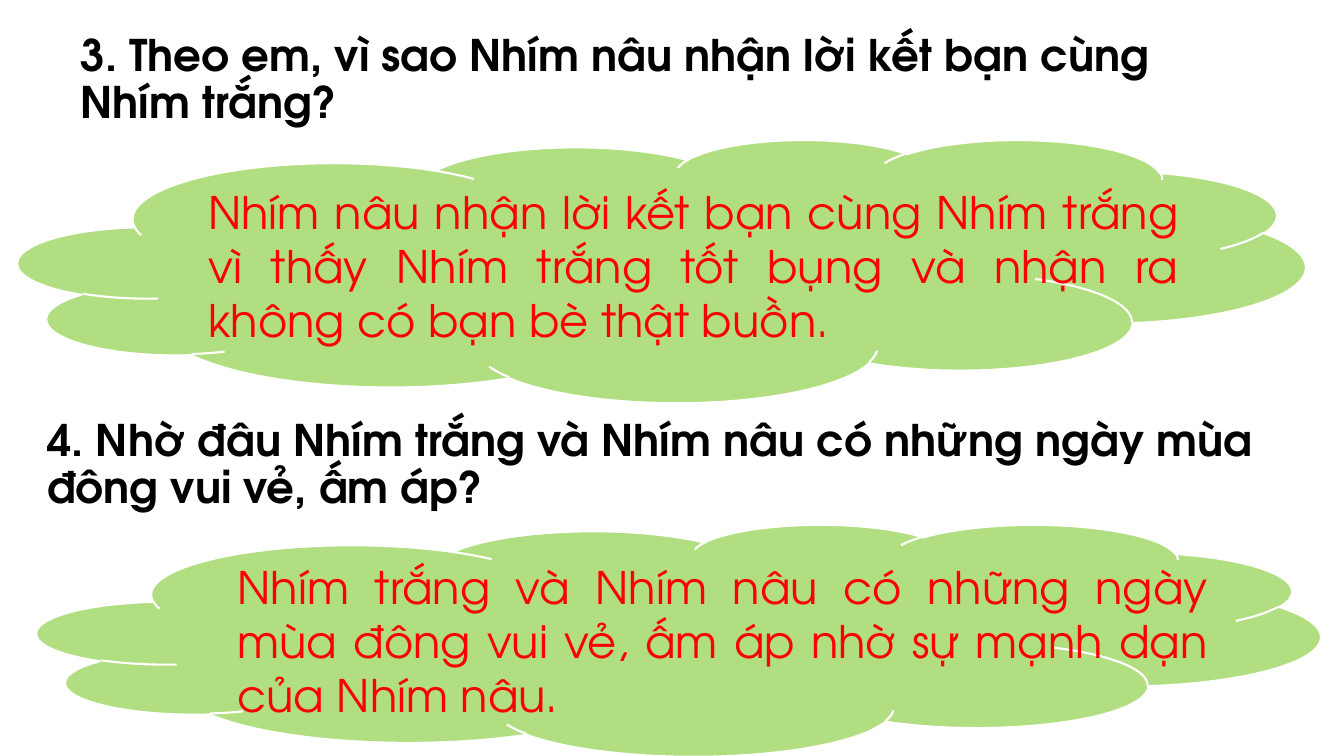
import dataclasses

import pptx
import pptx.dml.color
import pptx.enum.shapes
import pptx.enum.text
import pptx.util

Pt = pptx.util.Pt
Align = pptx.enum.text.PP_ALIGN


@dataclasses.dataclass(frozen=True)
class Theme:
    font: str = "TeX Gyre Adventor"
    question_size: float = 31.1
    answer_size: float = 32
    question_color: str = "000000"
    answer_color: str = "FF0000"
    cloud_color: str = "B2DE82"
    white: str = "FFFFFF"


THEME = Theme()


def rgb(color):
    return pptx.dml.color.RGBColor.from_string(color)


def place(shape, frame):
    shape.left, shape.top, shape.width, shape.height = map(Pt, frame)


def write(box, text, size, color, align, bold=False, spacing=1.0):
    text_frame = box.text_frame
    text_frame.word_wrap = True
    text_frame.auto_size = pptx.enum.text.MSO_AUTO_SIZE.NONE
    text_frame.vertical_anchor = pptx.enum.text.MSO_ANCHOR.MIDDLE
    text_frame.text = text
    para = text_frame.paragraphs[0]
    para.alignment = align
    para.line_spacing = spacing
    para.font.name = THEME.font
    para.font.size = Pt(size)
    para.font.bold = bold
    para.font.color.rgb = rgb(color)


def fill_question(box, text, frame):
    place(box, frame)
    box.fill.solid()
    box.fill.fore_color.rgb = rgb(THEME.white)
    write(box, text, THEME.question_size, THEME.question_color,
          Align.LEFT, bold=True, spacing=0.9)


def add_answer(page, text, cloud_frame, text_frame):
    """Group a cloud with the answer written over it."""
    group = page.shapes.add_group_shape()
    cloud = group.shapes.add_shape(
        pptx.enum.shapes.MSO_SHAPE.CLOUD, *map(Pt, cloud_frame))
    cloud.shadow.inherit = False
    cloud.fill.solid()
    cloud.fill.fore_color.rgb = rgb(THEME.cloud_color)
    cloud.line.color.rgb = rgb(THEME.white)
    cloud.line.width = Pt(1.5)
    box = group.shapes.add_textbox(*map(Pt, text_frame))
    write(box, text, THEME.answer_size, THEME.answer_color, Align.JUSTIFY)


def main():
    deck = pptx.Presentation()
    deck.slide_width, deck.slide_height = Pt(960), Pt(540)
    page = deck.slides.add_slide(deck.slide_layouts.get_by_name("Title Only"))

    fill_question(
        page.shapes.title,
        "3. Theo em, vì sao Nhím nâu nhận lời kết bạn cùng Nhím trắng?",
        (50.4, 17.3, 843, 81.4))
    fill_question(
        page.shapes.add_textbox(0, 0, 0, 0),
        "4. Nhờ đâu Nhím trắng và Nhím nâu có những ngày mùa đông vui vẻ, ấm áp?",
        (26.6, 292.3, 905.8, 81.4))
    add_answer(
        page,
        "Nhím nâu nhận lời kết bạn cùng Nhím trắng vì thấy Nhím trắng "
        "tốt bụng và nhận ra không có bạn bè thật buồn.",
        (13, 99.4, 919.4, 187.9), (141.8, 136.1, 707.8, 107.3))
    add_answer(
        page,
        "Nhím trắng và Nhím nâu có những ngày mùa đông vui vẻ, ấm áp "
        "nhờ sự mạnh dạn của Nhím nâu.",
        (26.6, 374.4, 916.6, 165.6), (162.7, 405.4, 707.8, 104.4))
    deck.save("out.pptx")


if __name__ == "__main__":
    main()
